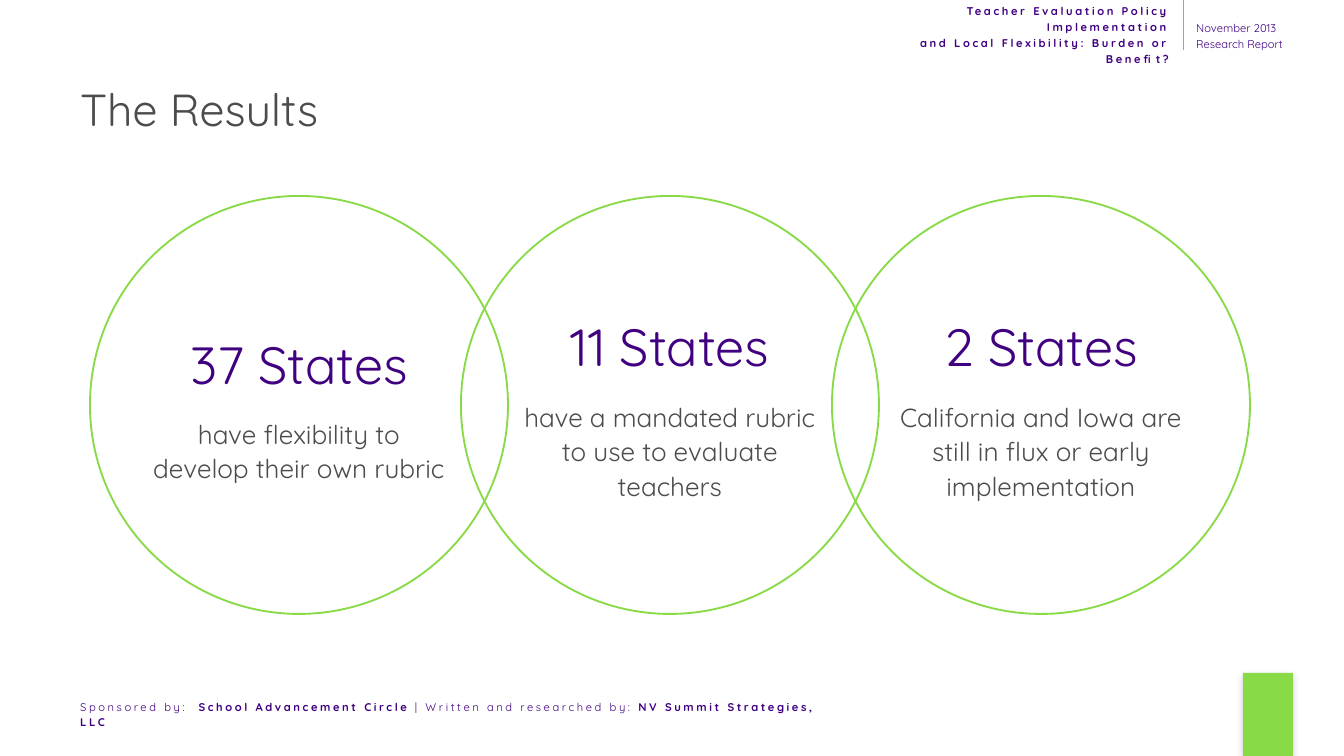
from lxml.etree import SubElement
from pptx import Presentation
from pptx.dml.color import RGBColor
from pptx.enum.shapes import MSO_CONNECTOR, MSO_SHAPE
from pptx.enum.text import MSO_ANCHOR, PP_ALIGN
from pptx.oxml.ns import qn
from pptx.util import Emu, Pt

WIDE, HIGH = 1344, 756
SCALE = 9144000 / WIDE
FONT = "Quicksand"
GREEN = RGBColor(0x88, 0xDA, 0x47)
LEAF = RGBColor(0x6B, 0xCF, 0x4B)
PURPLE = RGBColor(0x40, 0x00, 0x80)
GRAY = RGBColor(0x4C, 0x4C, 0x4C)
STATES = [
    ("37 States", "have flexibility to develop their own rubric"),
    ("11 States", "have a mandated rubric to use to evaluate teachers"),
    ("2 States", "California and Iowa are still in flux or early implementation"),
]
CREDIT = [
    ("Sponsored by:  ", False),
    ("School Advancement Circle", True),
    (" | Written and researched by: ", False),
    ("NV Summit Strategies, LLC", True),
]


def px(*sizes):
    """Turn pixel lengths into EMU."""
    return [Emu(round(size * SCALE)) for size in sizes]


def style(para, size, color, bold=None, track=None, lead=None):
    """Set the font, tracking and line spacing of a paragraph."""
    font = para.font
    font.name, font.size, font.bold = FONT, Pt(size), bold
    font.color.rgb = color
    if track:
        para._p.pPr.find(qn("a:defRPr")).set("spc", str(track))
    if lead:
        para.line_spacing = lead


def add_text(slide, box, anchor=MSO_ANCHOR.MIDDLE):
    """Add a wrapping text box and return its frame."""
    frame = slide.shapes.add_textbox(*px(*box)).text_frame
    frame.word_wrap = True
    frame.vertical_anchor = anchor
    return frame


def add_header(slide, left, top, width, height):
    """Place the report name, the rule and the date in the top band."""
    split = left + 301
    name = add_text(slide, (left, top + 9, 300, 50)).paragraphs[0]
    name.text = "Teacher Evaluation Policy Implementation\vand Local Flexibility: Burden or Benefit?"
    name.alignment = PP_ALIGN.RIGHT
    style(name, 6, PURPLE, True, 140, 1.2)
    date = add_text(slide, (split, top + 12, width - 301, 46))
    date.text = "November 2013\nResearch Report"
    for para in date.paragraphs:
        style(para, 6, PURPLE, lead=1.2)
    rule = slide.shapes.add_connector(
        MSO_CONNECTOR.STRAIGHT, *px(split, top + height, split, top))
    rule.line.color.rgb = LEAF
    rule.line.width = Pt(0.25)
    SubElement(rule._element.spPr, qn("a:effectLst"))


def add_title(slide, *box):
    """Place the slide title."""
    para = add_text(slide, box, MSO_ANCHOR.TOP).paragraphs[0]
    para.text = "The Results"
    style(para, 24, GRAY)


def add_ring(slide, left, top, size, head, note):
    """Place one outlined circle with its count and note."""
    ring = slide.shapes.add_shape(MSO_SHAPE.OVAL, *px(left, top, size, size))
    ring.shadow.inherit = False
    ring.fill.background()
    ring.line.color.rgb = GREEN
    ring.line.width = Pt(1)
    frame = ring.text_frame
    frame.word_wrap = True
    frame.vertical_anchor = MSO_ANCHOR.MIDDLE
    frame.margin_left = frame.margin_right = 0
    frame.margin_top = frame.margin_bottom = 0
    frame.text = f"{head}\n{note}"
    looks = [(28, PURPLE), (14, GRAY)]
    for para, (size, color) in zip(frame.paragraphs, looks):
        para.alignment = PP_ALIGN.CENTER
        para.space_after = Pt(6)
        style(para, size, color, lead=1.1)
    frame.paragraphs[1].space_before = Pt(5)


def add_rings(slide, left, top, width, size):
    """Spread the overlapping circles evenly over the width."""
    step = (width - size) // (len(STATES) - 1)
    for spot, (head, note) in enumerate(STATES):
        add_ring(slide, left + spot * step, top, size, head, note)


def add_footer(slide, *box):
    """Place the credit line."""
    para = add_text(slide, box).paragraphs[0]
    for words, bold in CREDIT:
        run = para.add_run()
        run.text = words
        run.font.bold = bold
    style(para, 6, PURPLE, track=140, lead=1.1)


def add_tab(slide, *box):
    """Place the green corner tab with its soft shadow."""
    tab = slide.shapes.add_shape(MSO_SHAPE.RECTANGLE, *px(*box))
    tab.fill.solid()
    tab.fill.fore_color.rgb = GREEN
    tab.line.fill.background()
    tab.shadow.inherit = False
    glow = SubElement(
        tab._element.spPr.find(qn("a:effectLst")), qn("a:outerShdw"),
        blurRad=str(Pt(4.2)), dist=str(Pt(2)), dir="5400000", rotWithShape="0")
    tint = SubElement(glow, qn("a:srgbClr"), val=str(PURPLE))
    SubElement(tint, qn("a:alpha"), val="24000")


def main():
    """Build and save the slide."""
    deck = Presentation()
    deck.slide_width, deck.slide_height = px(WIDE, HIGH)
    slide = deck.slides.add_slide(deck.slide_layouts[6])
    add_tab(slide, 1243, 673, 50, 83)
    add_header(slide, 882, 0, 422, 50)
    add_footer(slide, 67, 702, 775, 23)
    add_title(slide, 67, 75, 1210, 126)
    add_rings(slide, 90, 196, 1160, 418)
    deck.save("out.pptx")


if __name__ == "__main__":
    main()
